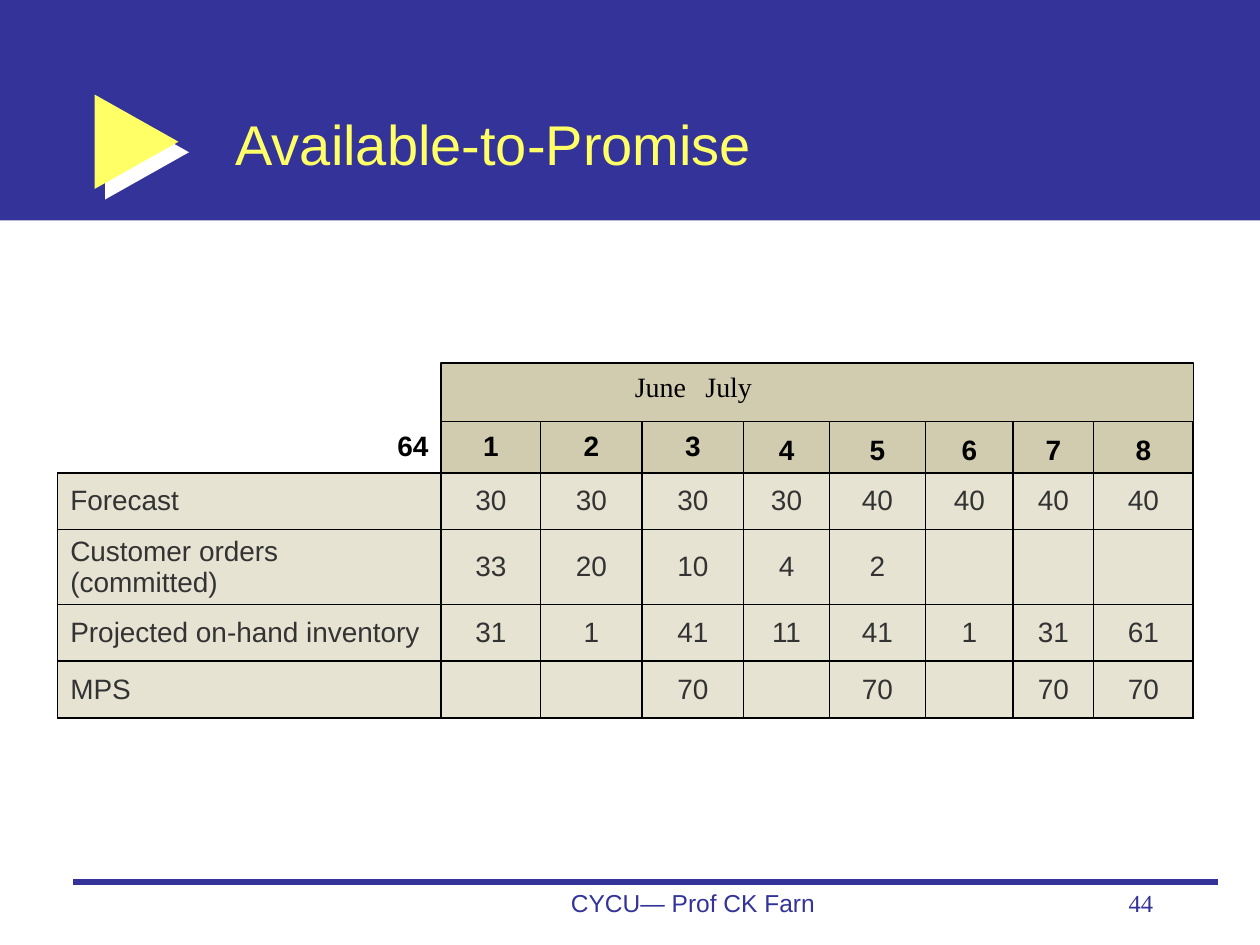
from lxml.etree import SubElement
from pptx import Presentation
from pptx.dml.color import RGBColor as RGB
from pptx.enum.shapes import MSO_CONNECTOR as Connector, MSO_SHAPE as Shape
from pptx.enum.text import MSO_ANCHOR as Anchor, MSO_AUTO_SIZE as AutoSize, PP_ALIGN as Align
from pptx.oxml.ns import qn
from pptx.util import Pt

COLORS = {"blue": "333399", "yellow": "FFFF66", "white": "FFFFFF", "black": "000000",
          "gray": "333333", "header": "D1CBAF", "body": "E6E3D2"}
COLUMN_WIDTHS = [219, 57, 58, 58, 49, 55, 50, 46, 57]
ROW_HEIGHTS = [29.2, 32.4, 42.8, 32.4, 32.4]
PLAN = [
    ["64", "1", "2", "3", "4", "5", "6", "7", "8"],
    ["Forecast", "30", "30", "30", "30", "40", "40", "40", "40"],
    ["Customer orders\v(committed)", "33", "20", "10", "4", "2", "", "", ""],
    ["Projected on-hand inventory", "31", "1", "41", "11", "41", "1", "31", "61"],
    ["MPS", "", "", "70", "", "70", "", "70", "70"],
]


def color(name):
    return RGB.from_string(COLORS[name])


def points(*lengths):
    return [Pt(length) for length in lengths]


def add_color(parent, name):
    fill = SubElement(parent, qn("a:solidFill"))
    SubElement(fill, qn("a:srgbClr"), val=COLORS[name])


class SlideBuilder:
    def __init__(self, page, font="Arial"):
        self.page = page
        self.font = font

    def fill_text(self, frame, text, size, ink, align=Align.LEFT, font=None, bold=False):
        frame.text = text
        para = frame.paragraphs[0]
        para.alignment = align
        style = {"name": font or self.font, "size": Pt(size), "bold": bold}
        for span in para.runs:
            for key, value in style.items():
                setattr(span.font, key, value)
            span.font.color.rgb = color(ink)
        return para

    def title(self, box, text, size, ink):
        title = self.page.shapes.title
        title.left, title.top, title.width, title.height = points(*box)
        frame = title.text_frame
        frame.auto_size = AutoSize.NONE
        frame.vertical_anchor = Anchor.MIDDLE
        self.fill_text(frame, text, size, ink)
        # Bring the title in front of the band
        self.page.shapes._spTree.append(title._element)

    def shape(self, kind, box, fill, line=None):
        shape = self.page.shapes.add_shape(kind, *points(*box))
        shape.shadow.inherit = False
        shape.fill.solid()
        shape.fill.fore_color.rgb = color(fill)
        if line:
            shape.line.color.rgb = color(line)
            shape.line.width = Pt(0.75)
        else:
            shape.line.fill.background()
        return shape

    def pointer(self, box, fill, shadow):
        """Arrow that is all head, with a hard shadow down to the right."""
        arrow = self.shape(Shape.RIGHT_ARROW, box, fill)
        arrow.adjustments[0], arrow.adjustments[1] = 0.384, 1
        effects = arrow._element.spPr.find(qn("a:effectLst"))
        cast = SubElement(effects, qn("a:outerShdw"), dist=str(Pt(8.5)),
                          dir=str(45 * 60000), algn="ctr", rotWithShape="0")
        SubElement(cast, qn("a:srgbClr"), val=COLORS[shadow])

    def rule(self, start, end, ink, width):
        line = self.page.shapes.add_connector(Connector.STRAIGHT, *points(*start, *end))
        line.line.color.rgb = color(ink)
        line.line.width = Pt(width)
        SubElement(line._element.spPr, qn("a:effectLst"))

    def text(self, box, *content, **style):
        frame = self.page.shapes.add_textbox(*points(*box)).text_frame
        frame.word_wrap = True
        self.fill_text(frame, *content, **style)

    def months(self, box, text, indent, tab):
        band = self.shape(Shape.RECTANGLE, box, "header", line="black")
        frame = band.text_frame
        frame.vertical_anchor = Anchor.TOP
        para = self.fill_text(frame, text, 16, "black", font="Times New Roman")
        para.space_after = Pt(8)
        props = para._p.get_or_add_pPr()
        props.set("marL", "0")
        props.set("indent", str(Pt(indent)))
        stops = SubElement(props, qn("a:tabLst"))
        SubElement(stops, qn("a:tab"), pos=str(Pt(tab)), algn="l")

    def borders(self, cell, sides):
        props = cell._tc.get_or_add_tcPr()
        for place, side in enumerate("LRTB"):
            line = SubElement(props, qn(f"a:ln{side}"), w=str(Pt(1)))
            if side in sides:
                add_color(line, "black")
            else:
                SubElement(line, qn("a:noFill"))
            props.insert(place, line)

    def table(self, left, top, widths, heights, rows):
        size = points(left, top, sum(widths), sum(heights))
        table = self.page.shapes.add_table(len(rows), len(widths), *size).table
        table.first_row = table.horz_banding = False
        for column, width in zip(table.columns, widths):
            column.width = Pt(width)
        for r, (row, height) in enumerate(zip(rows, heights)):
            table.rows[r].height = Pt(height)
            for c, text in enumerate(row):
                self.cell(table.cell(r, c), text, r, c)

    def cell(self, cell, text, r, c):
        header, corner = r == 0, r == c == 0
        cell.fill.solid()
        cell.fill.fore_color.rgb = color("white" if corner else "header" if header else "body")
        cell.vertical_anchor = Anchor.BOTTOM if header and c > 3 else Anchor.MIDDLE
        align = Align.RIGHT if corner else Align.CENTER if c else Align.LEFT
        para = self.fill_text(cell.text_frame, text, 16, "black" if header else "gray",
                              align, bold=header)
        if not text:
            para.font.size = Pt(16)
        self.borders(cell, "RB" if corner else "LRTB")


def main():
    deck = Presentation()
    deck.slide_width, deck.slide_height = points(720, 540)
    slide = SlideBuilder(deck.slides.add_slide(deck.slide_layouts[5]))
    slide.shape(Shape.RECTANGLE, (0, 0, 720, 126), "blue")
    slide.pointer((54, 54, 48, 54), "yellow", "white")
    slide.rule((42, 504), (696, 504), "blue", 3)
    slide.text((282, 504, 228, 36), "CYCU— Prof CK Farn", 14, "blue", align=Align.CENTER)
    slide.text((516, 504, 150, 36), "44", 14, "blue", align=Align.RIGHT,
               font="Times New Roman")
    slide.title((127.4, 49, 367, 65), "Available-to-Promise", 32, "yellow")
    slide.months((252, 207.5, 430, 33.5), "June\tJuly", indent=103.7, tab=144)
    slide.table(33, 241, COLUMN_WIDTHS, ROW_HEIGHTS, PLAN)
    deck.save("out.pptx")


if __name__ == "__main__":
    main()
